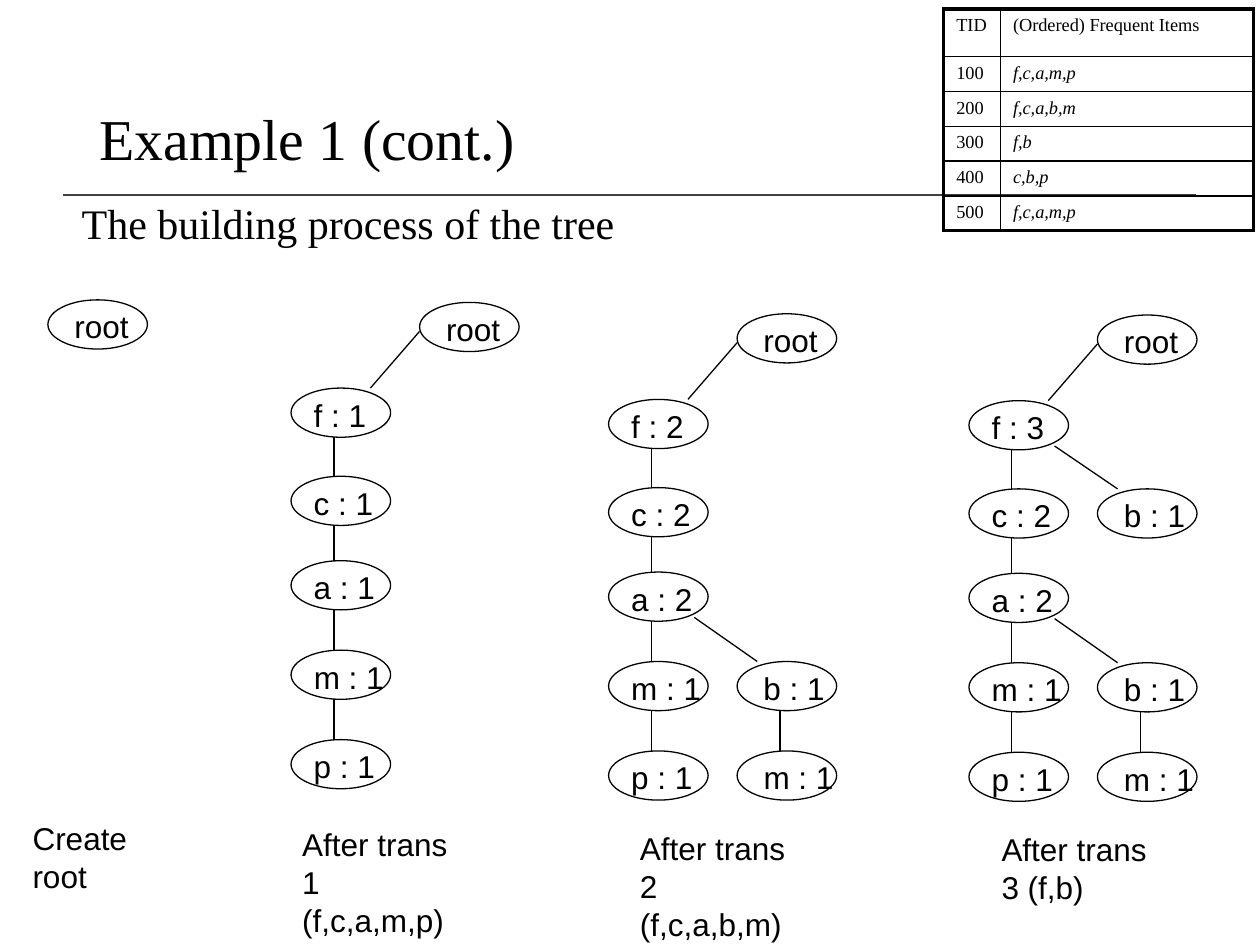
from dataclasses import dataclass

from pptx import Presentation
from pptx.dml.color import RGBColor
from pptx.enum.shapes import MSO_CONNECTOR, MSO_SHAPE
from pptx.enum.text import MSO_ANCHOR, MSO_AUTO_SIZE
from pptx.oxml.ns import qn
from pptx.util import Inches, Pt
from lxml.etree import SubElement


@dataclass(frozen=True)
class Theme:
    """Colours, fonts, type sizes and line widths."""
    ink: str = "000000"
    rule: str = "404040"
    serif: str = "Times New Roman"
    sans: str = "Arial"
    title: float = 33
    subtitle: float = 24
    body: float = 18
    cell: float = 10.5
    thin: float = 0.75
    inner: float = 1
    outer: float = 2.25


T = Theme()
NODE_W, NODE_H = 0.79, 0.39
SIDE = 1.02
DEPTHS = [0.68, 1.38, 2.05, 2.76, 3.47]

TREES = [
    dict(x=2.31, y=2.4, spine=["f : 1", "c : 1", "a : 1", "m : 1", "p : 1"], branches={},
         caption="After trans 1 (f,c,a,m,p)", at=(2.3, 6.5)),
    dict(x=4.83, y=2.49, spine=["f : 2", "c : 2", "a : 2", "m : 1", "p : 1"],
         branches={2: ["b : 1", "m : 1"]},
         caption="After trans 2 (f,c,a,b,m)", at=(4.98, 6.53)),
    dict(x=7.69, y=2.5, spine=["f : 3", "c : 2", "a : 2", "m : 1", "p : 1"],
         branches={0: ["b : 1"], 2: ["b : 1", "m : 1"]},
         caption="After trans 3 (f,b)", at=(7.85, 6.54)),
]

TRANSACTIONS = [
    ("TID", "(Ordered) Frequent Items"),
    ("100", "f,c,a,m,p"),
    ("200", "f,c,a,b,m"),
    ("300", "f,b"),
    ("400", "c,b,p"),
    ("500", "f,c,a,m,p"),
]


def style_run(p, size, font, italic=False):
    """Format the first run of a paragraph."""
    f = p.runs[0].font
    f.size, f.name, f.italic = Pt(size), font, italic
    f.color.rgb = RGBColor.from_string(T.ink)


def add_text(shapes, text, x, y, w, h, size, font, inset=True):
    """Add a wrapping text box and return its text frame."""
    tf = shapes.add_textbox(Inches(x), Inches(y), Inches(w), Inches(h)).text_frame
    tf.text = text
    tf.word_wrap = True
    tf.auto_size = MSO_AUTO_SIZE.SHAPE_TO_FIT_TEXT
    if not inset:
        tf.margin_left = tf.margin_top = tf.margin_right = tf.margin_bottom = 0
    style_run(tf.paragraphs[0], size, font)
    return tf


def add_line(shapes, x1, y1, x2, y2, color=T.ink, width=T.thin):
    """Add a straight line without a shadow."""
    c = shapes.add_connector(MSO_CONNECTOR.STRAIGHT, Inches(x1), Inches(y1), Inches(x2), Inches(y2))
    c.line.color.rgb = RGBColor.from_string(color)
    c.line.width = Pt(width)
    SubElement(c._element.spPr, qn("a:effectLst"))


def add_node(shapes, text, x, y, indent=0.21):
    """Add an oval tree node with its label."""
    sp = shapes.add_shape(MSO_SHAPE.OVAL, Inches(x), Inches(y), Inches(NODE_W), Inches(NODE_H))
    sp.shadow.inherit = False
    sp.fill.background()
    sp.line.color.rgb = RGBColor.from_string(T.ink)
    sp.line.width = Pt(T.thin)
    w = 0.61 if text.startswith("m") else 0.5
    add_text(shapes, text, x + indent, y + 0.06, w, 0.3, T.body, T.sans, inset=False)


def add_chain(shapes, labels, x, tops, indent):
    """Add a column of nodes joined by vertical lines."""
    for upper, lower in zip(tops, tops[1:]):
        add_line(shapes, x + 0.34, lower, x + 0.34, upper + NODE_H)
    for label, top in zip(labels, tops):
        add_node(shapes, label, x, top, indent)


def add_caption(shapes, text, x, y, w=1.48):
    """Add the caption below a tree."""
    add_text(shapes, text, x, y, w, 0.7, T.body, T.sans)


def add_tree(s, x, y, spine, branches, caption, at):
    """Add one grouped tree with its root, spine, branches and caption."""
    shapes = s.shapes.add_group_shape().shapes
    tops = [y + d for d in DEPTHS]
    side = x + SIDE
    add_node(shapes, "root", side, y)
    add_line(shapes, side, y + 0.23, x + 0.63, tops[0])
    add_chain(shapes, spine, x, tops, 0.18)
    for parent, labels in branches.items():
        below = tops[parent + 1:parent + 1 + len(labels)]
        add_line(shapes, side + 0.16, below[0], x + 0.68, tops[parent] + 0.36)
        add_chain(shapes, labels, side, below, 0.21)
    add_caption(shapes, caption, *at)


def set_borders(cell, widths):
    """Draw the left, right, top and bottom borders of a cell."""
    tc_pr = cell._tc.get_or_add_tcPr()
    for tag, width in zip(("a:lnL", "a:lnR", "a:lnT", "a:lnB"), widths):
        ln = SubElement(tc_pr, qn(tag), w=str(Pt(width)))
        SubElement(SubElement(ln, qn("a:solidFill")), qn("a:srgbClr"), val=T.ink)


def add_transactions(s, x, y, widths, head, height):
    """Add the transaction table."""
    n, m = len(TRANSACTIONS), len(widths)
    table = s.shapes.add_table(n, m, Inches(x), Inches(y), Inches(sum(widths)), Inches(height)).table
    table.first_row = table.horz_banding = False
    for col, w in zip(table.columns, widths):
        col.width = Inches(w)
    for i, row in enumerate(TRANSACTIONS):
        table.rows[i].height = Inches(head if i == 0 else (height - head) / (n - 1))
        for j, text in enumerate(row):
            cell = table.cell(i, j)
            cell.text = text
            style_run(cell.text_frame.paragraphs[0], T.cell, T.serif, italic=i > 0 and j > 0)
            edges = (j == 0, j == m - 1, i == 0, i == n - 1)
            set_borders(cell, [T.outer if edge else T.inner for edge in edges])
            cell.fill.background()


def main():
    """Build and save the slide."""
    prs = Presentation()
    prs.slide_width, prs.slide_height = Inches(10), Inches(7.5)
    s = prs.slides.add_slide(prs.slide_layouts[6])
    add_line(s.shapes, 0.5, 1.55, 9.49, 1.55, T.rule, T.inner)
    tf = add_text(s.shapes, "Example 1 (cont.)", 0.69, 0.4, 8.62, 1.45, T.title, T.serif)
    tf.auto_size = MSO_AUTO_SIZE.NONE
    tf.vertical_anchor = MSO_ANCHOR.MIDDLE
    tf.paragraphs[0].line_spacing = 0.9
    add_text(s.shapes, "The building process of the tree", 0.55, 1.52, 6.38, 0.5, T.subtitle, T.serif)
    start = s.shapes.add_group_shape().shapes
    add_node(start, "root", 0.38, 2.38)
    add_caption(start, "Create root", 0.16, 6.45, 1.39)
    for tree in TREES:
        add_tree(s, **tree)
    add_transactions(s, 7.49, 0.07, [0.45, 2.01], 0.38, 1.76)
    prs.save("out.pptx")


if __name__ == "__main__":
    main()
